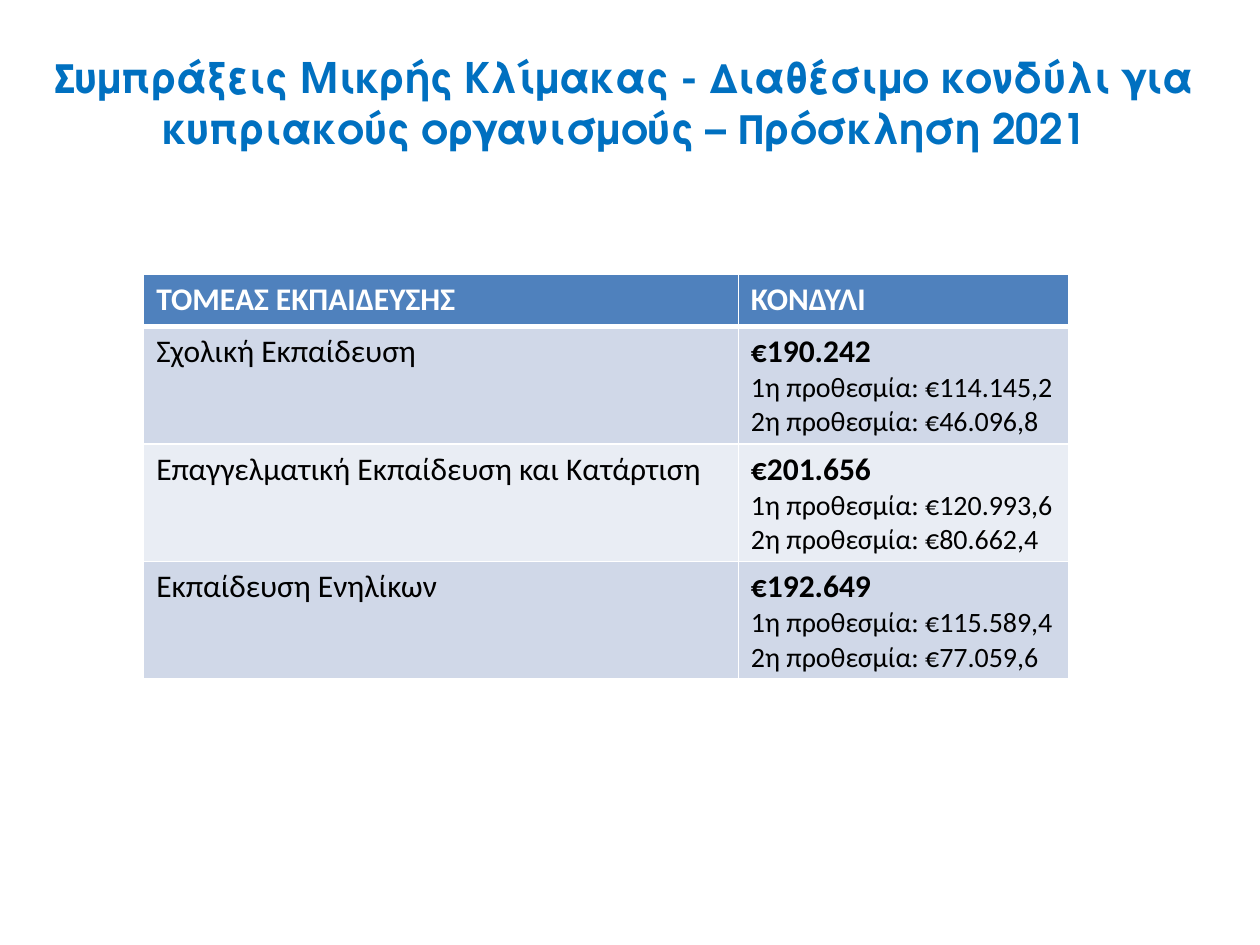
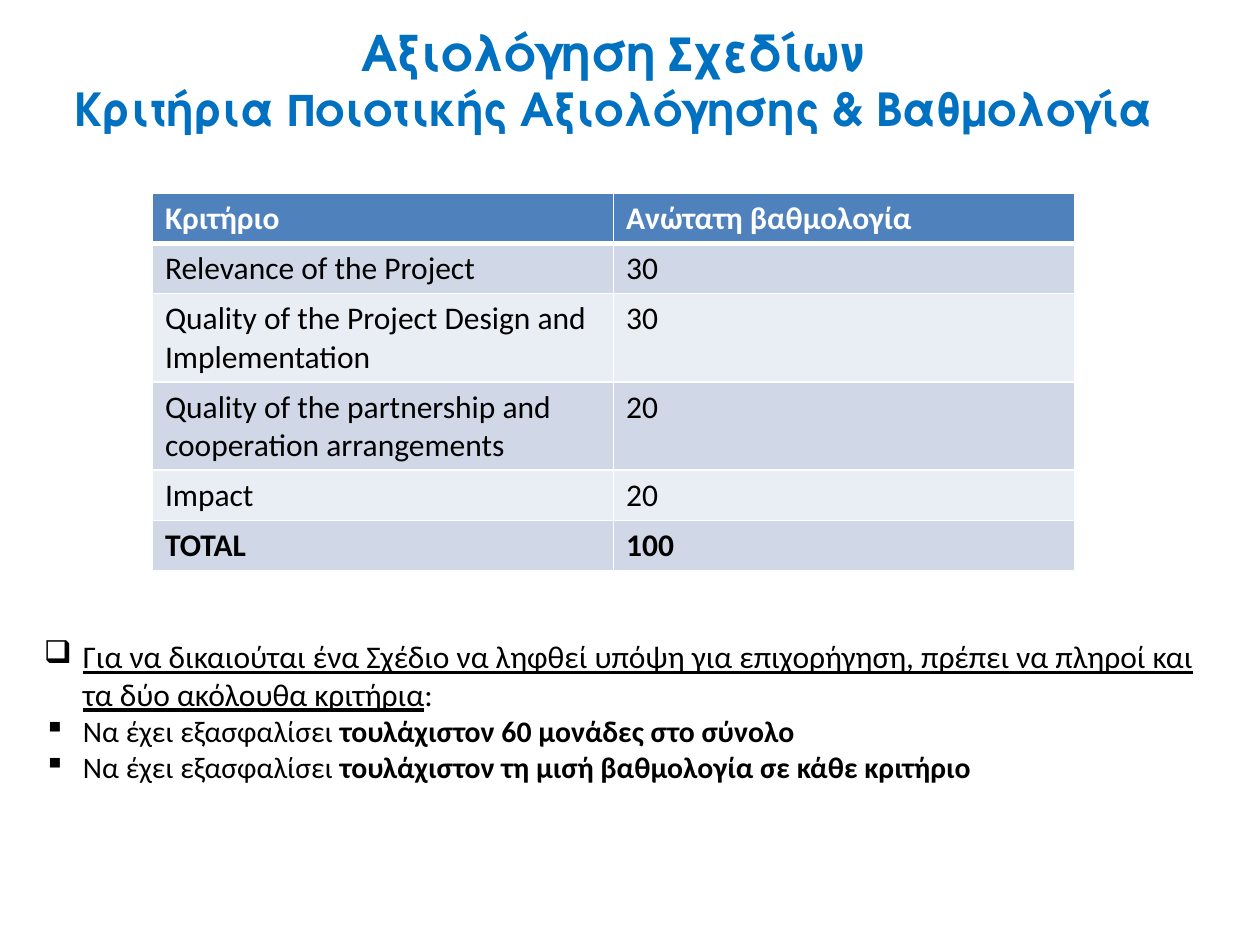
import dataclasses

import pptx
import pptx.dml.color
import pptx.enum.text
import pptx.oxml
import pptx.oxml.ns
import pptx.util
from pptx.util import Inches

ANCHOR = pptx.enum.text.MSO_ANCHOR
ALIGN = pptx.enum.text.PP_ALIGN


@dataclasses.dataclass(frozen=True)
class Theme:
    title: str = "0070C0"
    head: str = "4F81BD"
    bands: tuple = ("D0D8E8", "E9EDF4")
    ink: str = "000000"
    white: str = "FFFFFF"
    display: str = "TeX Gyre Adventor"
    body: str = "Calibri"
    large: int = 28
    medium: int = 26
    small: int = 24
    text: int = 18
    item: int = 17
    detail: int = 16
    rule: int = 1
    thick: int = 3
    indent: float = 0.31


def rgb(code):
    return pptx.dml.color.RGBColor.from_string(code)


class Deck:
    def __init__(self, theme):
        self.theme = theme
        self.file = pptx.Presentation()
        self.file.slide_width = Inches(10)
        self.file.slide_height = Inches(7.5)
        self.slide = None

    def page(self):
        self.slide = self.file.slides.add_slide(self.file.slide_layouts[6])

    def run(self, par, text, color=None, **form):
        run = par.add_run()
        run.text = text
        form = {"name": self.theme.body, "size": self.theme.text, **form}
        form["size"] = pptx.util.Pt(form["size"])
        for key, value in form.items():
            setattr(run.font, key, value)
        run.font.color.rgb = rgb(color or self.theme.ink)

    def pars(self, frame, count):
        """Return count paragraphs, the first being the one already there."""
        return [frame.paragraphs[0]] + [frame.add_paragraph() for _ in range(count - 1)]

    def box(self, place, anchor=ANCHOR.TOP):
        frame = self.slide.shapes.add_textbox(*map(Inches, place)).text_frame
        frame.word_wrap = True
        frame.vertical_anchor = anchor
        return frame

    def title(self, place, lines):
        frame = self.box(place, ANCHOR.MIDDLE)
        for par, (text, size) in zip(self.pars(frame, len(lines)), lines):
            par.alignment = ALIGN.CENTER
            self.run(par, text, self.theme.title, size=size, bold=True,
                     name=self.theme.display)

    def edges(self, cell, row):
        """Draw white cell borders, with a thick one below the header row."""
        props = cell._tc.get_or_add_tcPr()
        for side in "LRTB":
            heavy = (row, side) in ((0, "B"), (1, "T"))
            width = pptx.util.Pt(self.theme.thick if heavy else self.theme.rule)
            props.append(pptx.oxml.parse_xml(
                f'<a:ln{side} {pptx.oxml.ns.nsdecls("a")} w="{width}"><a:solidFill>'
                f'<a:srgbClr val="{self.theme.white}"/></a:solidFill></a:ln{side}>'))

    def cell(self, cell, row, lines, bold):
        theme = self.theme
        self.edges(cell, row)
        cell.fill.solid()
        cell.fill.fore_color.rgb = rgb(theme.bands[(row - 1) % 2] if row else theme.head)
        for i, par in enumerate(self.pars(cell.text_frame, len(lines))):
            self.run(par, lines[i], theme.ink if row else theme.white,
                     size=theme.detail if i else theme.text, bold=bold and i == 0)

    def table(self, place, cols, heights, rows, strong):
        """Fill a table; strong holds the (row, column) of bold body cells."""
        size = (sum(cols), sum(heights))
        grid = self.slide.shapes.add_table(
            len(rows), len(cols), *map(Inches, place + size)).table
        for col, width in zip(grid.columns, cols):
            col.width = Inches(width)
        for r, cells in enumerate(rows):
            grid.rows[r].height = Inches(heights[r])
            for c, text in enumerate(cells):
                self.cell(grid.cell(r, c), r, text.split("\n"),
                          r == 0 or (r, c) in strong)

    def list(self, place, items):
        frame = self.box(place)
        indent = Inches(self.theme.indent)
        for par, (mark, runs) in zip(self.pars(frame, len(items)), items):
            props = par._p.get_or_add_pPr()
            props.set("marL", str(indent))
            props.set("indent", str(-indent))
            props.append(pptx.oxml.parse_xml(
                f'<a:buChar {pptx.oxml.ns.nsdecls("a")} char="{mark}"/>'))
            for text, form in runs:
                self.run(par, text, **form)


def funds(deck):
    deck.page()
    deck.title((0.12, 0.29, 9.67, 1.04), [
        ("Συμπράξεις Μικρής Κλίμακας - Διαθέσιμο κονδύλι για "
         "κυπριακούς οργανισμούς – Πρόσκληση 2021", deck.theme.small)])
    sums = [
        ("Σχολική Εκπαίδευση", "190.242", "114.145,2", "46.096,8"),
        ("Επαγγελματική Εκπαίδευση και Κατάρτιση", "201.656", "120.993,6", "80.662,4"),
        ("Εκπαίδευση Ενηλίκων", "192.649", "115.589,4", "77.059,6"),
    ]
    rows = [("ΤΟΜΕΑΣ ΕΚΠΑΙΔΕΥΣΗΣ", "ΚΟΝΔΥΛΙ")]
    rows += [(field, f"€{total}\n1η προθεσμία: €{first}\n2η προθεσμία: €{second}")
             for field, total, first, second in sums]
    deck.table((1.14, 2.18), (4.72, 2.62), [0.41] + [0.93] * 3, rows,
               {(r, 1) for r in range(1, 4)})


def marks(deck):
    theme = deck.theme
    deck.page()
    deck.title((0.04, 0.1, 9.66, 1.06), [
        ("Αξιολόγηση Σχεδίων", theme.large),
        ("Κριτήρια Ποιοτικής Αξιολόγησης & Βαθμολογία", theme.medium)])
    rows = [
        ("Κριτήριο", "Ανώτατη βαθμολογία"),
        ("Relevance of the Project", "30"),
        ("Quality of the Project Design and Implementation", "30"),
        ("Quality of the partnership and cooperation arrangements", "20"),
        ("Impact", "20"),
        ("TOTAL", "100"),
    ]
    deck.table((1.21, 1.53), (3.66, 3.66), (0.4, 0.4, 0.7, 0.7, 0.4, 0.4), rows,
               {(5, 0), (5, 1)})
    rule = ("Για να δικαιούται ένα Σχέδιο να ληφθεί υπόψη για επιχορήγηση, "
            "πρέπει να πληροί και τα δύο ακόλουθα κριτήρια")
    needs = ("τουλάχιστον 60 μονάδες στο σύνολο",
             "τουλάχιστον τη μισή βαθμολογία σε κάθε κριτήριο")
    items = [("❑", [(rule, {"underline": True}), (":", {})])]
    items += [("▪", [("Να έχει εξασφαλίσει ", {"size": theme.item}),
                     (need, {"size": theme.item, "bold": True})]) for need in needs]
    deck.list((0.25, 5.01, 9.45, 1.28), items)


def main():
    deck = Deck(Theme())
    funds(deck)
    marks(deck)
    deck.file.save("out.pptx")


if __name__ == "__main__":
    main()
